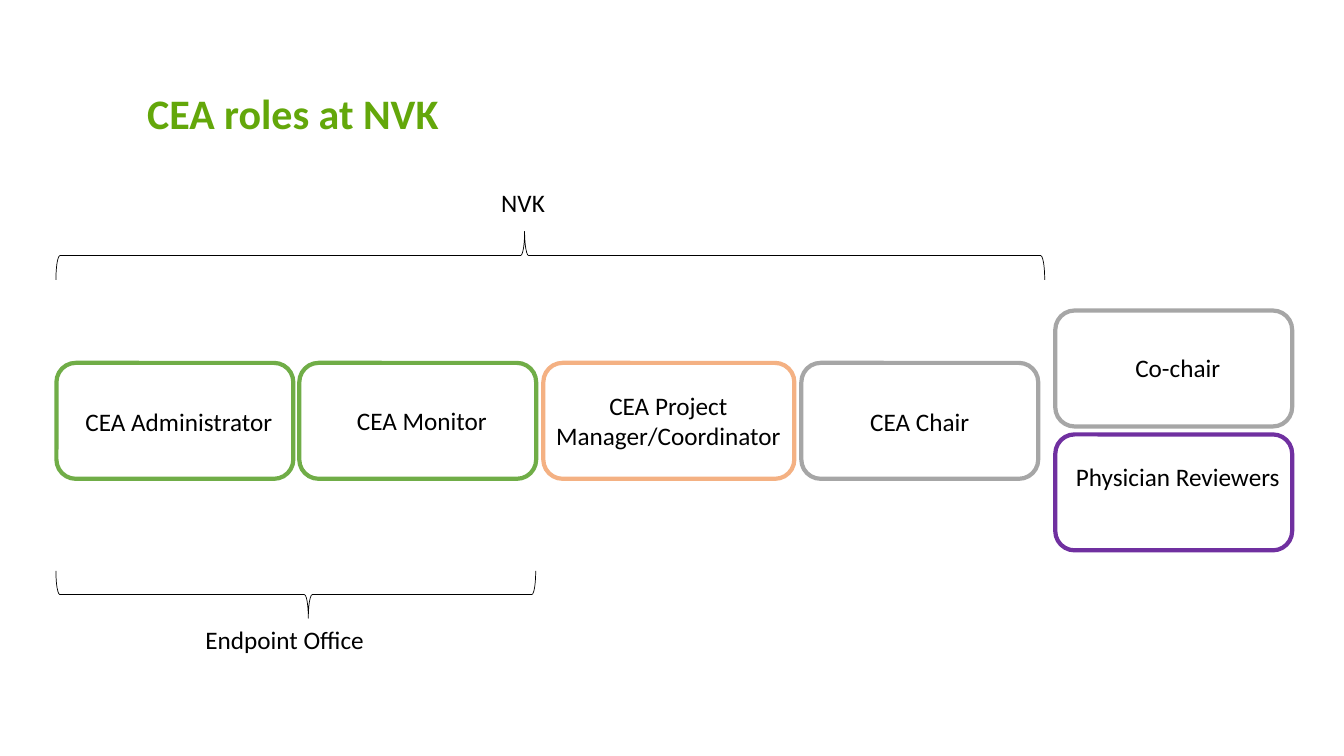
from pptx import Presentation
from pptx.dml.color import RGBColor
from pptx.enum.shapes import MSO_SHAPE as Kind
from pptx.enum.text import MSO_ANCHOR as Anchor, MSO_AUTO_SIZE as Fit, PP_ALIGN as Align
from pptx.util import Pt

GREEN, ORANGE, GRAY, PURPLE = "70AD47", "F4B183", "A6A6A6", "7030A0"
BLACK, TITLE = "000000", "63A70A"
GROUP = "NVK"

ROLES = [
    ("CEA Administrator", GREEN, (40.3, 259.2, 169.2), (46.1, 286.6, 163.4, 28.8)),
    ("CEA Monitor", GREEN, (213.8, 259.2, 169.2), (219.6, 285.8, 163.4, 28.8)),
    ("CEA Project Manager/Coordinator", ORANGE, (388.1, 259.2, 179.3),
     (383.8, 275, 187.2, 51.1)),
    ("CEA Chair", GRAY, (572.4, 259.2, 169.2), (575.3, 286.6, 163.4, 28.8)),
    ("Physician Reviewers", PURPLE, (753.8, 310.3, 169.2), (759.6, 326.2, 163.4, 28.8)),
    ("Co-chair", GRAY, (753.8, 221.8, 169.2), (759.6, 248.4, 163.4, 28.8)),
]


def color(code):
    return RGBColor.from_string(code)


def outline(slide, kind, box, code, width):
    shape = slide.shapes.add_shape(kind, *map(Pt, box))
    shape.shadow.inherit = False
    shape.fill.background()
    shape.line.color.rgb = color(code)
    shape.line.width = Pt(width)
    return shape


def brace(slide, box, turn):
    shape = outline(slide, Kind.RIGHT_BRACE, box, BLACK, 0.5)
    shape.rotation = turn
    shape.adjustments[0] = 0.083
    shape.adjustments[1] = 0.474


def label(slide, text, box, align=Align.CENTER, size=18, code=BLACK, bold=False):
    frame = slide.shapes.add_textbox(*map(Pt, box)).text_frame
    frame.word_wrap = True
    frame.auto_size = Fit.SHAPE_TO_FIT_TEXT
    frame.text = text
    para = frame.paragraphs[0]
    para.alignment = align
    font = para.runs[0].font
    font.name, font.size, font.bold = "Calibri", Pt(size), bold
    font.color.rgb = color(code)
    return frame


def title(slide, text, box):
    frame = label(slide, text, box, Align.LEFT, 30, TITLE, True)
    frame.auto_size = Fit.NONE
    frame.vertical_anchor = Anchor.BOTTOM
    frame.margin_left = frame.margin_right = Pt(0)
    frame.margin_top = frame.margin_bottom = Pt(0)


def main():
    deck = Presentation()
    deck.slide_width, deck.slide_height = Pt(960), Pt(540)
    slide = deck.slides.add_slide(deck.slide_layouts[6])
    for text, code, card, box in ROLES:
        outline(slide, Kind.ROUNDED_RECTANGLE, (*card, 82.8), code, 3)
        label(slide, text, box)
    brace(slide, (194.4, 253.4, 33.8, 342.7), 90)
    label(slide, "Endpoint Office", (139.7, 442.1, 161.3, 28.8), Align.LEFT)
    brace(slide, (375.8, -170.6, 34.6, 706.3), 270)
    label(slide, GROUP, (293, 130.3, 161.3, 28.8))
    title(slide, f"CEA roles at {GROUP}", (105.1, 31, 580.3, 67.7))
    deck.save("out.pptx")


if __name__ == "__main__":
    main()
